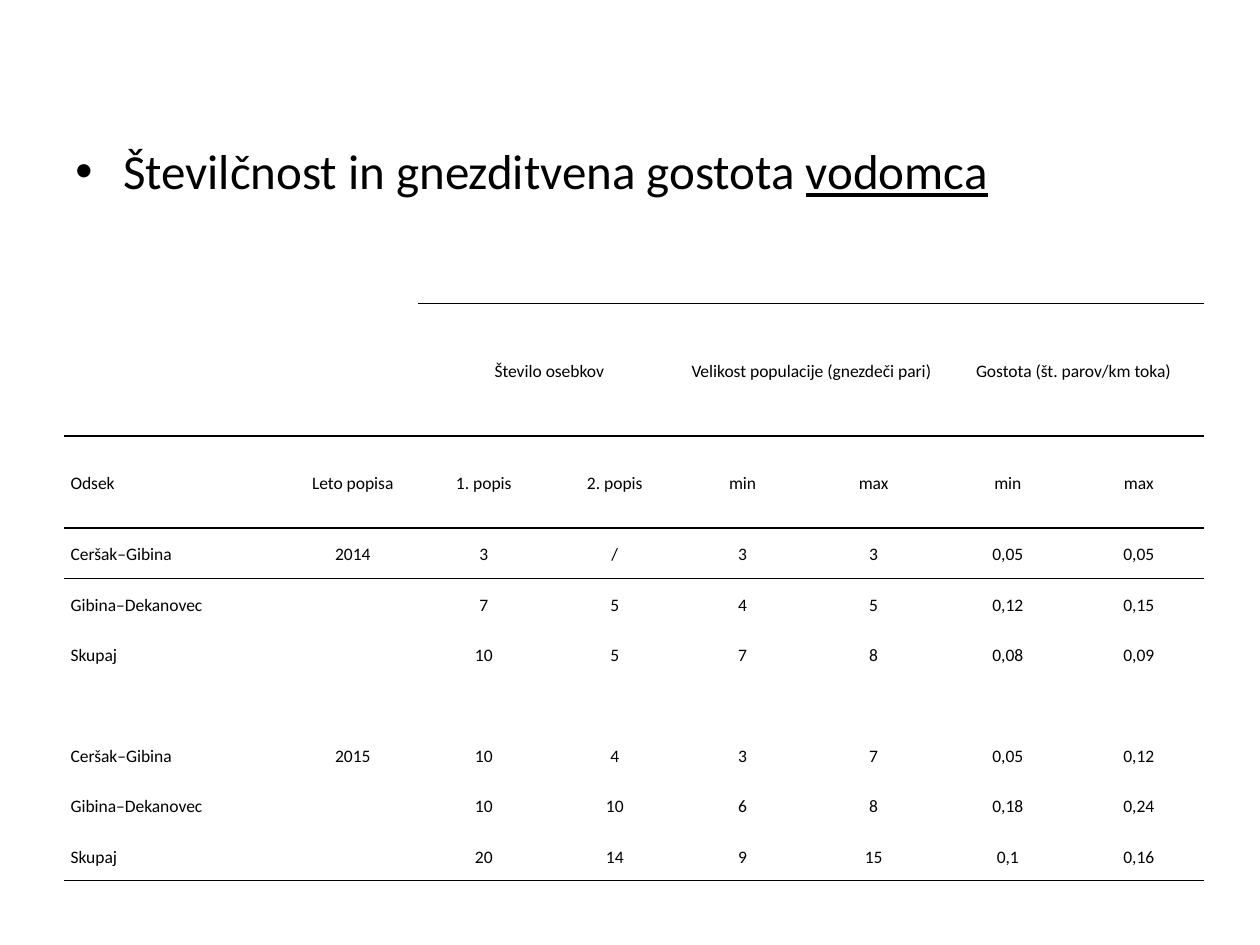
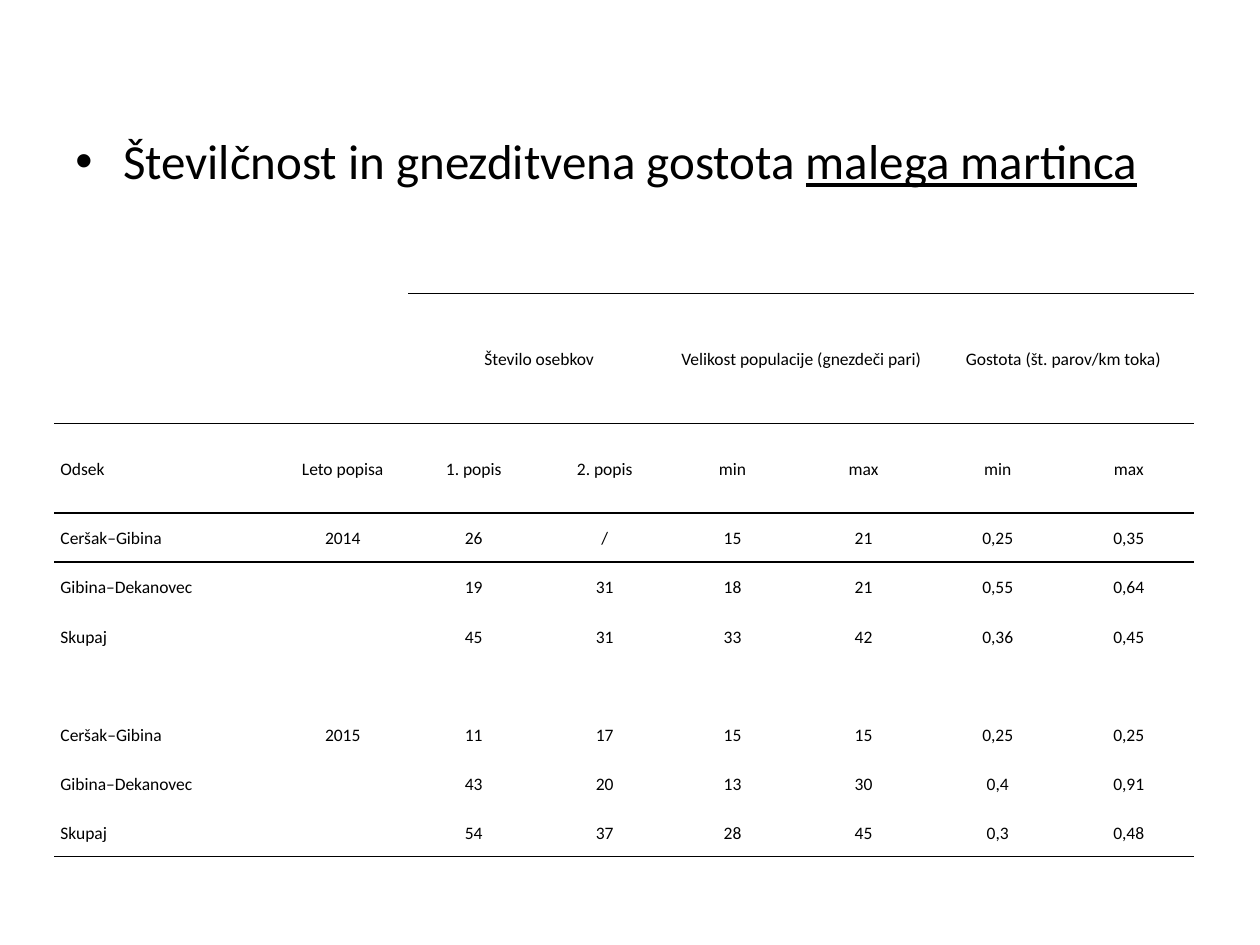
"""Build two slides of census tables for river birds."""
from dataclasses import dataclass

import lxml.etree
import pptx
import pptx.dml.color
import pptx.enum.text
import pptx.oxml.ns
import pptx.presentation
import pptx.slide
import pptx.table
import pptx.text.text
import pptx.util
from pptx.util import Inches

BLACK = pptx.dml.color.RGBColor(0x00, 0x00, 0x00)
WHITE = pptx.dml.color.RGBColor(0xFF, 0xFF, 0xFF)
FONT = "Calibri"
HEADING = "Številčnost in gnezditvena gostota "
NO_GRID_STYLE = "{2D5ABB26-0587-4C30-8999-92F81FD0307C}"
COLUMN_WIDTHS = (1.77, 1.04, 1.04, 1.04, 0.99, 1.09, 1.04, 1.04)
GROUPS = ("Število osebkov", "Velikost populacije (gnezdeči pari)", "Gostota (št. parov/km toka)")
FIELDS = ("Odsek", "Leto popisa", "1. popis", "2. popis", "min", "max", "min", "max")
SECTIONS = ("Ceršak–Gibina", "Gibina–Dekanovec", "Skupaj")
FIRST_GROUP_COLUMN = 2


@dataclass(frozen=True)
class Census:
    """Counts of one species and the placement of its slide."""

    species: str
    heading_top: float
    heading_height: float
    table_left: float
    table_top: float
    row_heights: tuple[float, float, float]
    counts: dict[str, tuple[str, ...]]


CENSUSES = (
    Census("vodomca", 1.07, 5.63, 0.51, 2.41, (1.05, 0.73, 0.4), {
        "2014": ("3 / 3 3 0,05 0,05", "7 5 4 5 0,12 0,15", "10 5 7 8 0,08 0,09"),
        "2015": ("10 4 3 7 0,05 0,12", "10 10 6 8 0,18 0,24", "20 14 9 15 0,1 0,16"),
    }),
    Census("malega martinca", 0.99, 5.71, 0.43, 2.33, (1.03, 0.71, 0.39), {
        "2014": ("26 / 15 21 0,25 0,35", "19 31 18 21 0,55 0,64", "45 31 33 42 0,36 0,45"),
        "2015": ("11 17 15 15 0,25 0,25", "43 20 13 30 0,4 0,91", "54 37 28 45 0,3 0,48"),
    }),
)


def add_text(paragraph: pptx.text.text._Paragraph, text: str, *, size: float,
             underline: bool = False) -> None:
    """Append a formatted run to a paragraph."""
    run = paragraph.add_run()
    run.text = text
    run.font.name = FONT
    run.font.size = pptx.util.Pt(size)
    run.font.color.rgb = BLACK
    run.font.underline = underline or None


def add_heading(slide: pptx.slide.Slide, census: Census) -> None:
    """Add the bulleted heading with the species underlined."""
    heading = slide.shapes.add_textbox(Inches(0.5), Inches(census.heading_top),
                                       Inches(9), Inches(census.heading_height))
    heading.text_frame.word_wrap = True
    paragraph = heading.text_frame.paragraphs[0]
    properties = paragraph._p.get_or_add_pPr()
    properties.set("marL", str(Inches(0.38)))
    properties.set("indent", str(Inches(-0.38)))
    bullet_font = lxml.etree.SubElement(properties, pptx.oxml.ns.qn("a:buFont"))
    bullet_font.set("typeface", "Arial")
    bullet = lxml.etree.SubElement(properties, pptx.oxml.ns.qn("a:buChar"))
    bullet.set("char", "•")
    add_text(paragraph, HEADING, size=28)
    add_text(paragraph, census.species, size=28, underline=True)


def add_rule(cell: pptx.table._Cell, edge: str) -> None:
    """Draw a black one-point border on one edge of a cell."""
    properties = cell._tc.get_or_add_tcPr()
    line = lxml.etree.SubElement(properties, pptx.oxml.ns.qn(f"a:{edge}"))
    line.set("w", str(pptx.util.Pt(1)))
    fill = lxml.etree.SubElement(line, pptx.oxml.ns.qn("a:solidFill"))
    color = lxml.etree.SubElement(fill, pptx.oxml.ns.qn("a:srgbClr"))
    color.set("val", str(BLACK))


def table_rows(census: Census) -> list[list[str]]:
    """Return the cell texts, with an empty row between years."""
    group_row = [""] * FIRST_GROUP_COLUMN
    for group in GROUPS:
        group_row += [group, ""]
    rows = [group_row, list(FIELDS)]
    for year, counts in census.counts.items():
        if len(rows) > 2:
            rows.append([""] * len(FIELDS))
        for index, (section, values) in enumerate(zip(SECTIONS, counts)):
            rows.append([section, "" if index else year, *values.split()])
    return rows


def format_cell(cell: pptx.table._Cell, text: str, row: int, column: int, last_row: int) -> None:
    """Set the text, rules and fill of one table cell."""
    cell.margin_left = cell.margin_right = Inches(0.05)
    cell.margin_top = cell.margin_bottom = 0
    cell.vertical_anchor = pptx.enum.text.MSO_ANCHOR.MIDDLE
    if row in (1, 2) or (row == 0 and column >= FIRST_GROUP_COLUMN):
        add_rule(cell, "lnT")
    if row in (0, 1, last_row):
        add_rule(cell, "lnB")
    cell.fill.background()
    if text:
        paragraph = cell.text_frame.paragraphs[0]
        paragraph.line_spacing = 1.15
        if column:
            paragraph.alignment = pptx.enum.text.PP_ALIGN.CENTER
        add_text(paragraph, text, size=10)


def add_census_table(slide: pptx.slide.Slide, census: Census) -> None:
    """Add the table of counts, population sizes and densities."""
    rows = table_rows(census)
    group_height, field_height, count_height = census.row_heights
    heights = [group_height, field_height] + [count_height] * (len(rows) - 2)
    table = slide.shapes.add_table(
        len(rows), len(FIELDS), Inches(census.table_left), Inches(census.table_top),
        Inches(sum(COLUMN_WIDTHS)), Inches(sum(heights))).table
    table.first_row = table.horz_banding = False
    table._tbl.tblPr.find(pptx.oxml.ns.qn("a:tableStyleId")).text = NO_GRID_STYLE
    for column, width in zip(table.columns, COLUMN_WIDTHS):
        column.width = Inches(width)
    for row, height in zip(table.rows, heights):
        row.height = Inches(height)
    for row_index, texts in enumerate(rows):
        for column_index, text in enumerate(texts):
            format_cell(table.cell(row_index, column_index), text,
                        row_index, column_index, len(rows) - 1)
    for column_index in range(FIRST_GROUP_COLUMN, len(FIELDS), 2):
        table.cell(0, column_index).merge(table.cell(0, column_index + 1))


def add_census_slide(presentation: pptx.presentation.Presentation, census: Census) -> None:
    """Add one species slide."""
    slide = presentation.slides.add_slide(presentation.slide_layouts[6])
    slide.background.fill.solid()
    slide.background.fill.fore_color.rgb = WHITE
    add_heading(slide, census)
    add_census_table(slide, census)


def main() -> None:
    """Build and save the presentation."""
    presentation = pptx.Presentation()
    presentation.slide_width = Inches(10)
    presentation.slide_height = Inches(7.5)
    for census in CENSUSES:
        add_census_slide(presentation, census)
    presentation.save("out.pptx")


if __name__ == "__main__":
    main()
